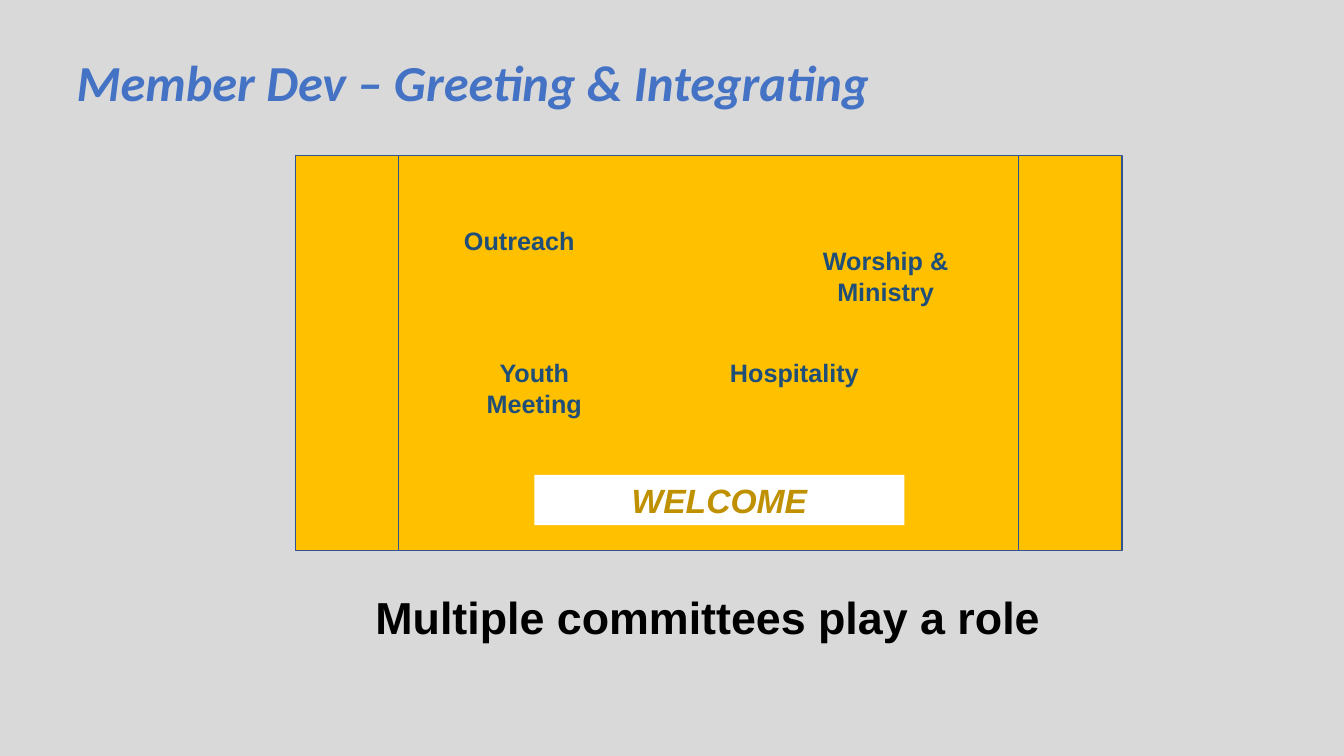
from pptx import Presentation
from pptx import util as u
from pptx.dml import color
from pptx.enum import shapes, text

WIDTH, HEIGHT = u.Inches(13.333), u.Inches(7.5)
COLUMN, ROW = WIDTH / 100, HEIGHT / 100
GOLD, NAVY = "FFC000", "1F4E79"
LABELS = [
    ("Outreach", 9.83, 8.67, 13.65, 5.33),
    ("Hospitality", 30.3, 26.13, 13.65, 5.33),
    ("Worship & Ministry", 35.4, 11.33, 17.03, 9.47),
    ("Youth Meeting", 10.95, 26.13, 13.65, 9.47),
]


def rgb(value):
    return color.RGBColor.from_string(value)


def grid(left, top, width, height):
    return [round(n) for n in (left * COLUMN, top * ROW, width * COLUMN, height * ROW)]


def write(shape, words, size, ink, font="Arial", italic=False,
          align=text.PP_ALIGN.CENTER, anchor=text.MSO_ANCHOR.TOP):
    frame = shape.text_frame
    frame.word_wrap = True
    frame.auto_size = text.MSO_AUTO_SIZE.NONE
    frame.vertical_anchor = anchor
    para = frame.paragraphs[0]
    para.alignment = align
    span = para.add_run()
    span.text = words
    span.font.name = font
    span.font.size = u.Pt(size)
    span.font.bold = True
    span.font.italic = italic
    span.font.color.rgb = rgb(ink)


def add_block(page, kind, place, fill, line=None):
    block = page.shapes.add_shape(kind, *grid(*place))
    block.shadow.inherit = False
    block.fill.solid()
    block.fill.fore_color.rgb = rgb(fill)
    if line:
        block.line.color.rgb = rgb(line)
        block.line.width = u.Pt(1)
    else:
        block.line.fill.background()
    return block


def add_title(page, place):
    title = page.shapes.title
    title.left, title.top, title.width, title.height = grid(*place)
    write(title, "Member Dev – Greeting & Integrating", 36, "4472C4",
          font="Calibri", italic=True, align=text.PP_ALIGN.LEFT)


def add_caption(page, place):
    caption = page.shapes.add_textbox(*grid(*place))
    write(caption, "Multiple committees play a role", 32, "000000")


def add_meeting_house(page, place):
    left, top = place[:2]
    add_block(page, shapes.MSO_SHAPE.FLOWCHART_PREDEFINED_PROCESS, place, GOLD, line="325491")
    for words, across, down, width, height in LABELS:
        label = add_block(page, shapes.MSO_SHAPE.RECTANGLE,
                          (left + across, top + down, width, height), GOLD)
        write(label, words, 18, NAVY)
    welcome = add_block(page, shapes.MSO_SHAPE.RECTANGLE,
                        (left + 17.78, top + 42.27, 27.53, 6.67), "FFFFFF")
    write(welcome, "WELCOME", 24, "BF9000", italic=True)


def main():
    deck = Presentation()
    deck.slide_width, deck.slide_height = WIDTH, HEIGHT
    page = deck.slides.add_slide(deck.slide_layouts.get_by_name("Title Only"))
    page.background.fill.solid()
    page.background.fill.fore_color.rgb = rgb("D9D9D9")
    add_title(page, (4.95, 6.13, 78.45, 9.47))
    add_caption(page, (16.95, 77.33, 71.48, 8.53))
    add_meeting_house(page, (21.98, 20.53, 61.5, 52.27))
    deck.save("out.pptx")


if __name__ == "__main__":
    main()
